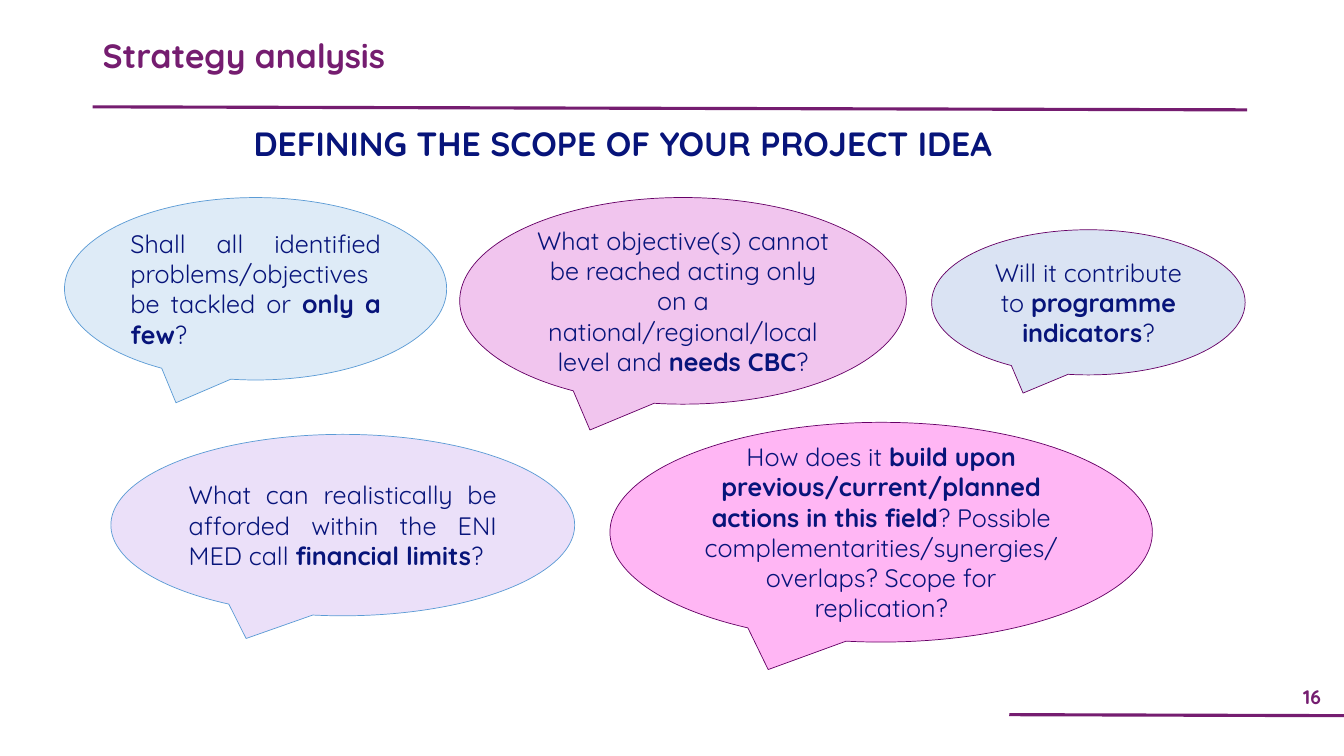
from pptx import Presentation
from pptx.dml.color import RGBColor
from pptx.enum import shapes, text
from pptx.oxml.ns import qn
from pptx.util import Inches, Pt
from lxml import etree

PLUM = RGBColor(0x75, 0x1D, 0x70)
NAVY = RGBColor(0x07, 0x14, 0x7A)
BLUE = RGBColor(0x5B, 0x9B, 0xD5)
WINE = RGBColor(0x66, 0x00, 0x66)
SKY = RGBColor(0xDE, 0xEB, 0xF7)
ROSE = RGBColor(0xF1, 0xC5, 0xEE)
LILAC = RGBColor(0xEB, 0xE0, 0xF9)
MIST = RGBColor(0xDA, 0xE3, 0xF3)
PINK = RGBColor(0xFF, 0xB6, 0xF4)

LEFT = text.PP_ALIGN.LEFT
MID = text.PP_ALIGN.CENTER
FULL = text.PP_ALIGN.JUSTIFY

deck = Presentation()
deck.slide_width = Inches(13.33)
deck.slide_height = Inches(7.5)
slide = deck.slides.add_slide(deck.slide_layouts[6])


def write(shape, words, size=18, color=NAVY, align=MID, bold=False,
          anchor=text.MSO_ANCHOR.MIDDLE, space=1.0):
    """Fill a shape with one paragraph; words between asterisks are bold."""
    frame = shape.text_frame
    frame.word_wrap = True
    frame.vertical_anchor = anchor
    para = frame.paragraphs[0]
    para.alignment = align
    para.line_spacing = space
    for i, part in enumerate(words.split("*")):
        run = para.add_run()
        run.text = part
        run.font.name = "Quicksand"
        run.font.size = Pt(size)
        run.font.bold = bold or i % 2 == 1
        run.font.color.rgb = color


# Rules under the title and above the page edge
for ends in [(0.92, 1.06, 12.37, 1.09), (10.01, 7.09, 13.35, 7.1)]:
    rule = slide.shapes.add_connector(
        shapes.MSO_CONNECTOR.STRAIGHT, *map(Inches, ends))
    rule.line.color.rgb = PLUM
    rule.line.width = Pt(2.25)
    etree.SubElement(rule._element.spPr, qn("a:effectLst"))

# Title, heading and page number
top = text.MSO_ANCHOR.TOP
labels = [
    ("Strategy analysis", (0.92, 0.34, 9.73, 0.65),
     dict(size=24, color=PLUM, align=LEFT, anchor=top, space=0.9)),
    ("DEFINING THE SCOPE OF YOUR PROJECT IDEA", (0.92, 1.22, 10.51, 5.2),
     dict(size=24, anchor=top, space=0.9)),
    ("16", (12.7, 6.73, 0.63, 0.36), dict(size=14, color=PLUM)),
]
for words, area, style in labels:
    box = slide.shapes.add_textbox(*map(Inches, area))
    write(box, words, bold=True, **style)

# Question bubbles
bubbles = [
    ("Shall all identified problems/objectives be tackled or *only a few*?",
     (0.64, 1.96, 3.79, 1.81), SKY, BLUE, FULL),
    ("What objective(s) cannot be reached acting only on a "
     "national/regional/local level and *needs CBC*?",
     (4.56, 1.96, 4.43, 2.05), ROSE, WINE, MID),
    ("What can realistically be afforded within the ENI MED call "
     "*financial limits*?",
     (1.1, 4.31, 4.6, 1.8), LILAC, BLUE, FULL),
    ("Will it contribute to *programme indicators*?",
     (9.24, 2.28, 3.11, 1.44), MIST, WINE, MID),
    ("How does it *build upon previous/current/planned actions in this "
     "field*? Possible complementarities/synergies/overlaps? "
     "Scope for replication?",
     (6.05, 4.19, 5.38, 2.18), PINK, WINE, MID),
]
for words, area, fill, edge, align in bubbles:
    bubble = slide.shapes.add_shape(
        shapes.MSO_SHAPE.OVAL_CALLOUT, *map(Inches, area))
    bubble.shadow.inherit = False
    bubble.fill.solid()
    bubble.fill.fore_color.rgb = fill
    bubble.line.color.rgb = edge
    bubble.line.width = Pt(0.5)
    write(bubble, words, align=align)

deck.save("out.pptx")
